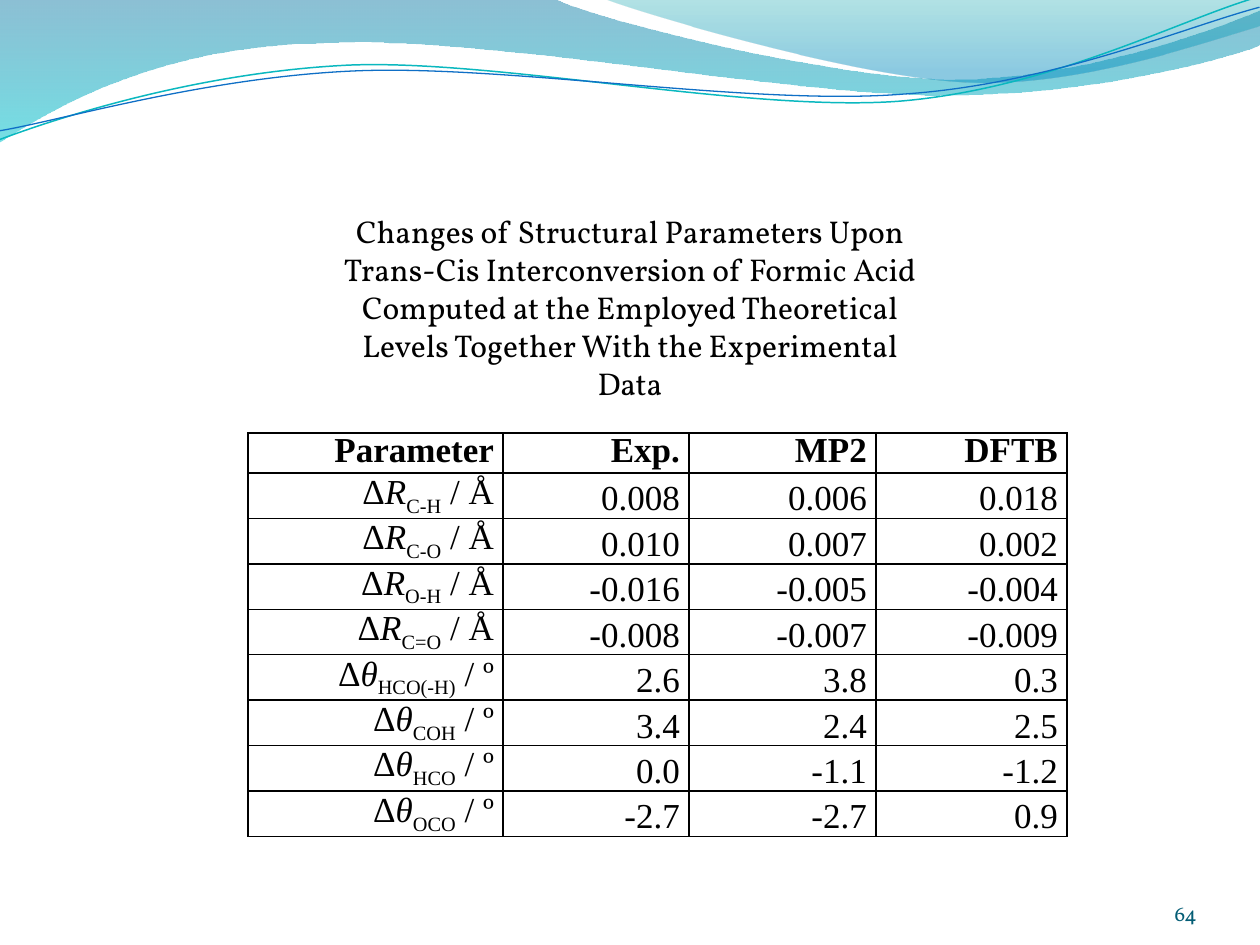
from dataclasses import dataclass
from typing import NamedTuple, Optional

from lxml import etree
from pptx import Presentation
from pptx import util as u
from pptx.dml.color import RGBColor
from pptx.enum import text
from pptx.oxml import ns

EMU_PER_PX = 914400 / 126


@dataclass(frozen=True)
class Theme:
    ink: str = "000000"
    number: str = "045D75"
    body_font: str = "Vollkorn"
    table_font: str = "Times New Roman"
    title_size: int = 18
    table_size: int = 20
    number_size: int = 12


class Stop(NamedTuple):
    position: float
    color: str
    alpha: int


class Stroke(NamedTuple):
    color: str
    width: float


@dataclass(frozen=True)
class Wave:
    """Each segment holds one end point (a line) or three points (a Bézier curve)."""
    start: tuple
    segments: list
    gradient: Optional[list] = None
    stroke: Optional[Stroke] = None
    rotation: float = 0


class Change(NamedTuple):
    symbol: str
    atoms: str
    unit: str
    values: tuple


THEME = Theme()
LINE_TILT = 357.3

WAVES = [
    Wave((0, 0), [
        [(554, -1)],
        [(600, 21), (837, 79), (955, 79)],
        [(1075, 79), (1207, 33), (1260, 11)],
        [(1261, 45)],
        [(1239, 55), (1096, 96), (940, 95)],
        [(784, 95), (481, 35), (324, 43)],
        [(163, 45), (58, 105), (-1, 142)],
        [(0, 0)],
    ], gradient=[Stop(0, "0074A1", 45), Stop(1, "00C6CF", 55)]),
    Wave((604, -1), [
        [(641, 14), (859, 78), (969, 82)],
        [(1079, 87), (1211, 40), (1260, 26)],
        [(1260, 0)],
        [(604, -1)],
    ], gradient=[Stop(0, "00A1A9", 30), Stop(0.8, "008BBF", 45)]),
    Wave((-3, 110), [
        [(59, 90), (200, 52), (350, 52)],
        [(498, 53), (745, 118), (897, 114)],
        [(1048, 109), (1184, 45), (1260, 27)],
    ], stroke=Stroke("0AB8BF", 0.85), rotation=LINE_TILT),
    Wave((-2, 101), [
        [(58, 94), (207, 57), (357, 58)],
        [(508, 59), (751, 112), (902, 107)],
        [(1052, 104), (1187, 53), (1262, 37)],
    ], stroke=Stroke("0F6FC6", 0.75), rotation=LINE_TILT),
]

TITLE = ("Changes of Structural Parameters Upon Trans-Cis Interconversion of Formic Acid "
         "Computed at the Employed Theoretical Levels Together With the Experimental Data")
HEADINGS = ("Parameter", "Exp.", "MP2", "DFTB")
COLUMN_WIDTHS = (255, 186, 187, 191)
HEADER_HEIGHT, ROW_HEIGHT = 40, 42
CHANGES = [
    Change("R", "C-H", "Å", ("0.008", "0.006", "0.018")),
    Change("R", "C-O", "Å", ("0.010", "0.007", "0.002")),
    Change("R", "O-H", "Å", ("-0.016", "-0.005", "-0.004")),
    Change("R", "C=O", "Å", ("-0.008", "-0.007", "-0.009")),
    Change("θ", "HCO(-H)", "º", ("2.6", "3.8", "0.3")),
    Change("θ", "COH", "º", ("3.4", "2.4", "2.5")),
    Change("θ", "HCO", "º", ("0.0", "-1.1", "-1.2")),
    Change("θ", "OCO", "º", ("-2.7", "-2.7", "0.9")),
]


def px(n: float) -> int:
    return round(n * EMU_PER_PX)


def style(r, font: str, size: int, color: str, bold: bool = False) -> None:
    r.font.name, r.font.size, r.font.bold = font, u.Pt(size), bold
    r.font.color.rgb = RGBColor.from_string(color)


def bend(sp, segments: list) -> None:
    """Join the three line steps of every curved segment into one Bézier step."""
    steps = iter(list(sp._element.iter(ns.qn("a:lnTo"))))
    for segment in segments:
        first, *others = [next(steps) for _ in segment]
        if others:
            curve = etree.Element(ns.qn("a:cubicBezTo"))
            first.addprevious(curve)
            for step in (first, *others):
                curve.append(step[0])
                step.getparent().remove(step)


def draw_wave(s, wave: Wave) -> None:
    points = [(px(x), px(y)) for segment in wave.segments for x, y in segment]
    builder = s.shapes.build_freeform(*map(px, wave.start))
    builder.add_line_segments(points, close=wave.gradient is not None)
    sp = builder.convert_to_shape()
    bend(sp, wave.segments)
    sp.rotation = wave.rotation
    sp.shadow.inherit = False
    if wave.gradient:
        sp.line.fill.background()
        sp.fill.gradient()
        sp.fill.gradient_angle = 270
        for stop, wanted in zip(sp.fill.gradient_stops, wave.gradient):
            stop.position = wanted.position
            stop.color.rgb = RGBColor.from_string(wanted.color)
        for color, wanted in zip(sp._element.spPr.iter(ns.qn("a:srgbClr")), wave.gradient):
            etree.SubElement(color, ns.qn("a:alpha"), val=str(wanted.alpha * 1000))
    else:
        sp.fill.background()
        sp.line.color.rgb = RGBColor.from_string(wave.stroke.color)
        sp.line.width = u.Pt(wave.stroke.width)


def draw_title(s) -> None:
    sp = s.shapes.title
    s.shapes._spTree.append(sp._element)
    sp.left, sp.top, sp.width, sp.height = px(315), px(206), px(630), px(203)
    tf = sp.text_frame
    tf.text = TITLE
    tf.word_wrap = True
    tf.auto_size = text.MSO_AUTO_SIZE.SHAPE_TO_FIT_TEXT
    tf.vertical_anchor = text.MSO_ANCHOR.TOP
    p = tf.paragraphs[0]
    p.alignment = text.PP_ALIGN.CENTER
    style(p.runs[0], THEME.body_font, THEME.title_size, THEME.ink)


def draw_page_number(s, number: str) -> None:
    tf = s.shapes.add_textbox(px(1092), px(876), px(105), px(50)).text_frame
    tf.text = number
    tf.word_wrap = True
    tf.margin_left = tf.margin_right = tf.margin_top = tf.margin_bottom = 0
    tf.vertical_anchor = text.MSO_ANCHOR.BOTTOM
    p = tf.paragraphs[0]
    p.alignment = text.PP_ALIGN.RIGHT
    style(p.runs[0], THEME.body_font, THEME.number_size, THEME.number)


def add_borders(cell) -> None:
    tcPr = cell._tc.get_or_add_tcPr()
    for i, side in enumerate(("a:lnL", "a:lnR", "a:lnT", "a:lnB")):
        line = etree.Element(ns.qn(side), w=str(u.Pt(1)))
        fill = etree.SubElement(line, ns.qn("a:solidFill"))
        etree.SubElement(fill, ns.qn("a:srgbClr"), val=THEME.ink)
        tcPr.insert(i, line)


def fill_cell(cell, parts: tuple, bold: bool = False, is_label: bool = False) -> None:
    """Labels sit at the top with tighter lines, values at the bottom."""
    cell.fill.background()
    add_borders(cell)
    cell.margin_left = cell.margin_right = px(9)
    cell.margin_top = cell.margin_bottom = 0
    cell.vertical_anchor = text.MSO_ANCHOR.TOP if is_label else text.MSO_ANCHOR.BOTTOM
    p = cell.text_frame.paragraphs[0]
    p.alignment = text.PP_ALIGN.RIGHT
    if is_label:
        p.line_spacing = 0.95
        p._p.get_or_add_pPr().set("indent", str(px(25)))
    for part in parts:
        r = p.add_run()
        r.text = part
        style(r, THEME.table_font, THEME.table_size, THEME.ink, bold)


def draw_table(s) -> None:
    height = HEADER_HEIGHT + ROW_HEIGHT * len(CHANGES)
    table = s.shapes.add_table(len(CHANGES) + 1, len(HEADINGS), px(248), px(433),
                               px(sum(COLUMN_WIDTHS)), px(height)).table
    table.first_row = table.horz_banding = False
    for column, width in zip(table.columns, COLUMN_WIDTHS):
        column.width = px(width)
    for i, row in enumerate(table.rows):
        row.height = px(ROW_HEIGHT if i else HEADER_HEIGHT)
    for j, heading in enumerate(HEADINGS):
        fill_cell(table.cell(0, j), (heading,), bold=True, is_label=True)
    for i, change in enumerate(CHANGES, 1):
        label = table.cell(i, 0)
        fill_cell(label, ("Δ", change.symbol, change.atoms, f" / {change.unit}"), is_label=True)
        _, symbol, atoms, _ = label.text_frame.paragraphs[0].runs
        symbol.font.italic = True
        atoms._r.get_or_add_rPr().set("baseline", "-25000")
        for j, value in enumerate(change.values, 1):
            fill_cell(table.cell(i, j), (value,))


def main() -> None:
    prs = Presentation()
    prs.slide_width, prs.slide_height = px(1260), px(945)
    s = prs.slides.add_slide(prs.slide_layouts[5])
    for wave in WAVES:
        draw_wave(s, wave)
    draw_page_number(s, "64")
    draw_table(s)
    draw_title(s)
    prs.save("out.pptx")


if __name__ == "__main__":
    main()
